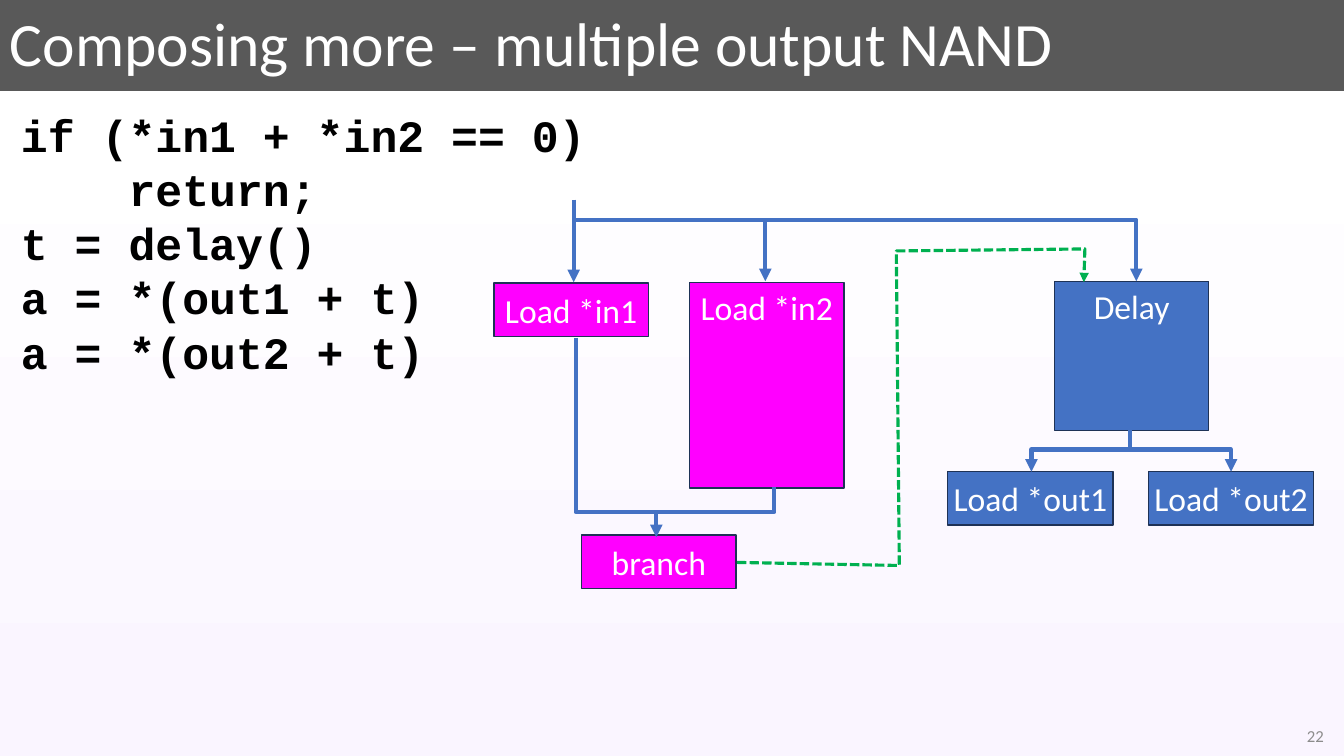
from lxml import etree
from pptx import Presentation
from pptx.dml.color import RGBColor
from pptx.enum.dml import MSO_LINE
from pptx.enum.shapes import MSO_CONNECTOR, MSO_SHAPE
from pptx.enum.text import MSO_ANCHOR, PP_ALIGN
from pptx.oxml.ns import qn
from pptx.util import Inches, Pt

RECT = MSO_SHAPE.RECTANGLE
STRAIGHT, ELBOW = MSO_CONNECTOR.STRAIGHT, MSO_CONNECTOR.ELBOW
TOP, MIDDLE = MSO_ANCHOR.TOP, MSO_ANCHOR.MIDDLE
LEFT, CENTER, RIGHT = PP_ALIGN.LEFT, PP_ALIGN.CENTER, PP_ALIGN.RIGHT
DASH = MSO_LINE.SQUARE_DOT

COLORS = {
    "bar": "595959", "white": "FFFFFF", "lilac": "FAF5FF", "black": "000000",
    "number": "8C8C8C", "magenta": "FF00FF", "blue": "4472C4",
    "navy": "1E3256", "green": "00B050",
}
CODE = [
    "if (*in1 + *in2 == 0)",
    "    return;",
    "t = delay()",
    "a = *(out1 + t)",
    "a = *(out2 + t)",
]
NODES = [  # text, left, top, width, height, fill, anchor, side inset
    ("Load *in1", 4.9, 2.81, 1.53, 0.53, "magenta", MIDDLE, 0.1),
    ("Load *in2", 6.84, 2.8, 1.53, 2.04, "magenta", TOP, 0.1),
    ("Delay", 10.46, 2.79, 1.53, 1.48, "blue", TOP, 0.1),
    ("branch", 5.77, 5.31, 1.53, 0.53, "magenta", MIDDLE, 0.1),
    ("Load *out1", 9.4, 4.68, 1.64, 0.53, "blue", MIDDLE, 0.04),
    ("Load *out2", 11.39, 4.68, 1.64, 0.53, "blue", MIDDLE, 0.04),
]
WIRES = [  # points, arrowhead
    ([(7.59, 2.18), (11.27, 2.18), (11.27, 2.79)], True),
    ([(5.7, 2.18), (7.59, 2.18), (7.59, 2.79)], True),
    ([(7.68, 4.83), (7.68, 5.08), (6.51, 5.08), (6.51, 5.33)], True),
    ([(5.71, 3.35), (5.71, 5.08), (6.51, 5.08)], False),
]
BRANCH_TO_DELAY = [(7.31, 5.58), (8.92, 5.61), (8.89, 2.49),
                   (10.76, 2.47), (10.75, 2.8)]


def rgb(name):
    return RGBColor.from_string(COLORS[name])


def set_background(s):
    fill = s.background.fill
    fill.gradient()
    fill.gradient_angle = 270
    stops = s._element.find(".//" + qn("a:gsLst"))
    for stop in list(stops):
        stops.remove(stop)
    for percent, name in [(0, "bar"), (12, "bar"), (12, "white"), (100, "lilac")]:
        stop = etree.SubElement(stops, qn("a:gs"), pos=str(percent * 1000))
        etree.SubElement(stop, qn("a:srgbClr"), val=COLORS[name])


def write(tf, lines, color, size, font="Calibri", bold=False, align=LEFT,
          anchor=TOP, spacing=None, inset=0.1):
    frame = {"word_wrap": True, "vertical_anchor": anchor,
             "margin_left": Inches(inset), "margin_right": Inches(inset)}
    for name, value in frame.items():
        setattr(tf, name, value)
    for i, line in enumerate(lines):
        p = tf.paragraphs[0] if i == 0 else tf.add_paragraph()
        p.alignment, p.line_spacing = align, spacing
        r = p.add_run()
        r.text = line
        for name, value in {"name": font, "size": Pt(size), "bold": bold}.items():
            setattr(r.font, name, value)
        r.font.color.rgb = rgb(color)


def add_text(s, box, lines, color, size, **style):
    sp = s.shapes.add_textbox(*map(Inches, box))
    write(sp.text_frame, lines, color, size, **style)


def add_node(s, text, left, top, width, height, fill, anchor, inset):
    sp = s.shapes.add_shape(RECT, *map(Inches, (left, top, width, height)))
    sp.shadow.inherit = False
    sp.fill.solid()
    sp.fill.fore_color.rgb = rgb(fill)
    sp.line.color.rgb = rgb("navy")
    sp.line.width = Pt(1)
    write(sp.text_frame, [text], "white", 24, align=CENTER, anchor=anchor,
          inset=inset)


def style_line(shape, color="blue", width=3, arrow=True, dash=None):
    shape.line.color.rgb = rgb(color)
    shape.line.width = Pt(width)
    if dash:
        shape.line.dash_style = dash
    if arrow:
        etree.SubElement(shape.line._get_or_add_ln(), qn("a:tailEnd"),
                         type="triangle")


def add_wire(s, points, **style):
    start, *rest = [tuple(map(Inches, point)) for point in points]
    builder = s.shapes.build_freeform(*start)
    builder.add_line_segments(rest, close=False)
    sp = builder.convert_to_shape()
    sp.shadow.inherit = False
    sp.fill.background()
    style_line(sp, **style)


def add_connector(s, kind, x1, y1, x2, y2):
    cn = s.shapes.add_connector(kind, *map(Inches, (x1, y1, x2, y2)))
    style_line(cn)
    etree.SubElement(cn._element.spPr, qn("a:effectLst"))
    return cn


def add_drop(s, x1, y1, x2, y2):
    """Elbow arrow that leaves and arrives vertically."""
    cx, cy = (x1 + x2) / 2, (y1 + y2) / 2
    half_w, half_h = (y2 - y1) / 2, abs(x2 - x1) / 2
    cn = add_connector(s, ELBOW, cx - half_w, cy - half_h,
                       cx + half_w, cy + half_h)
    xfrm = cn._element.spPr.find(qn("a:xfrm"))
    to_right = x2 > x1
    xfrm.set("rot", str((270 if to_right else 90) * 60000))
    if to_right:
        xfrm.set("flipH", "1")


def main():
    prs = Presentation()
    prs.slide_width, prs.slide_height = Inches(13.33), Inches(7.5)
    s = prs.slides.add_slide(prs.slide_layouts[6])
    set_background(s)
    add_text(s, (0, 0, 13.23, 0.92), ["Composing more – multiple output NAND"],
             "white", 44, anchor=MIDDLE, spacing=0.9)
    add_text(s, (10.23, 7.1, 3, 0.4), ["22"], "number", 12, align=RIGHT,
             anchor=MIDDLE)
    add_text(s, (0.11, 1.02, 5.96, 3.33), CODE, "black", 32,
             font="Courier New", bold=True, spacing=Pt(38.6))
    for node in NODES:
        add_node(s, *node)
    add_connector(s, STRAIGHT, 5.69, 1.98, 5.69, 2.8)
    for points, arrow in WIRES:
        add_wire(s, points, arrow=arrow)
    add_wire(s, BRANCH_TO_DELAY, color="green", width=2.25, dash=DASH)
    for x in (12.21, 10.23):
        add_drop(s, 11.21, 4.24, x, 4.68)
    prs.save("out.pptx")


if __name__ == "__main__":
    main()
